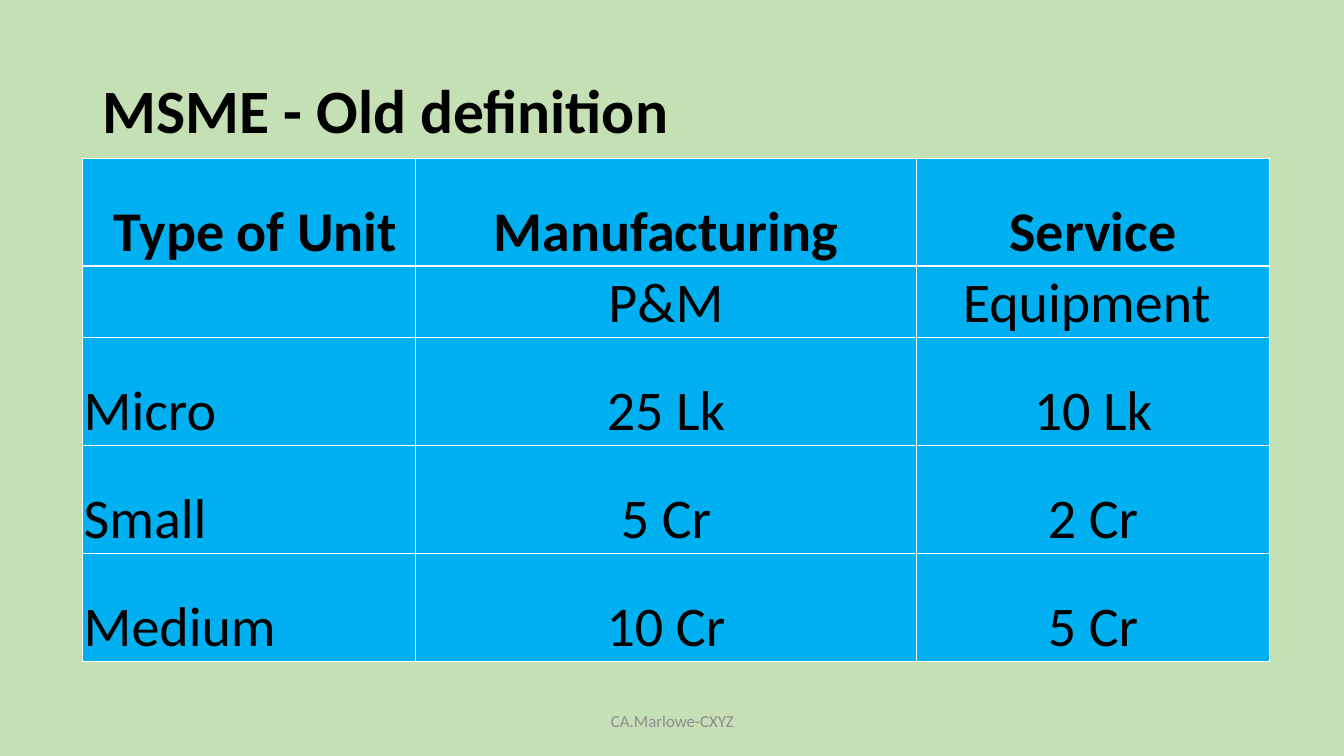
from lxml.etree import SubElement
from pptx import Presentation
from pptx.dml.color import RGBColor
from pptx.enum.text import MSO_ANCHOR, PP_ALIGN
from pptx.oxml.ns import qn
from pptx.util import Inches, Pt

GREEN = RGBColor(0xC5, 0xE0, 0xB4)
BLUE = RGBColor(0x00, 0xB0, 0xF0)
BLACK = RGBColor(0x00, 0x00, 0x00)
GREY = RGBColor(0x8C, 0x8C, 0x8C)
WHITE = RGBColor(0xFF, 0xFF, 0xFF)
FONT = "Calibri"

COL_WIDTHS = [3.3, 4.97, 3.5]
ROW_HEIGHTS = [1.07, 0.71, 1.07, 1.07, 1.07]
UNIT_LIMITS = [
    ["\u00a0Type of Unit".replace("\u00a0", " "), "Manufacturing", "Service"],
    ["", "P&M", "Equipment "],
    ["Micro", "25 Lk", "10 Lk"],
    ["Small", "5 Cr", "2 Cr"],
    ["Medium", "10 Cr", "5 Cr"],
]
UNIT_LIMITS[0][0] = " Type of Unit"


def add_run(p, text, size, color, bold=False):
    """Add one formatted run to a paragraph."""
    r = p.add_run()
    r.text = text
    r.font.name = FONT
    r.font.size = Pt(size)
    r.font.bold = bold
    r.font.color.rgb = color


def add_title(s, x, y, w, h):
    """Place the slide title in its placeholder."""
    sp = s.shapes.title
    sp.left, sp.top, sp.width, sp.height = map(Inches, (x, y, w, h))
    tf = sp.text_frame
    tf.word_wrap = True
    tf.vertical_anchor = MSO_ANCHOR.MIDDLE
    p = tf.paragraphs[0]
    p.alignment = PP_ALIGN.LEFT
    p.line_spacing = 0.9
    add_run(p, "MSME - Old definition", 44, BLACK, True)


def add_borders(cell, color, width):
    """Draw all four borders of a table cell."""
    tc_pr = cell._tc.get_or_add_tcPr()
    for side in ("a:lnL", "a:lnR", "a:lnT", "a:lnB"):
        ln = SubElement(tc_pr, qn(side), w=str(Pt(width)))
        fill = SubElement(ln, qn("a:solidFill"))
        SubElement(fill, qn("a:srgbClr"), val=str(color))


def add_limits_table(s, x, y, w, h):
    """Build the table of investment limits by type of unit."""
    frame = s.shapes.add_table(len(ROW_HEIGHTS), len(COL_WIDTHS),
                               Inches(x), Inches(y), Inches(w), Inches(h))
    table = frame.table
    for col, width in zip(table.columns, COL_WIDTHS):
        col.width = Inches(width)
    for row, height in zip(table.rows, ROW_HEIGHTS):
        row.height = Inches(height)
    for i, texts in enumerate(UNIT_LIMITS):
        for j, text in enumerate(texts):
            cell = table.cell(i, j)
            add_borders(cell, WHITE, 1)
            cell.fill.solid()
            cell.fill.fore_color.rgb = BLUE
            cell.vertical_anchor = MSO_ANCHOR.BOTTOM
            cell.margin_left = cell.margin_right = cell.margin_top = Inches(0.01)
            cell.margin_bottom = 0
            if text:
                p = cell.text_frame.paragraphs[0]
                p.alignment = PP_ALIGN.CENTER if i == 0 or j > 0 else PP_ALIGN.LEFT
                add_run(p, text, 40, BLACK, i == 0)


def add_footer(s, x, y, w, h):
    """Place the centred footer line."""
    sp = s.shapes.add_textbox(Inches(x), Inches(y), Inches(w), Inches(h))
    tf = sp.text_frame
    tf.word_wrap = True
    tf.vertical_anchor = MSO_ANCHOR.MIDDLE
    p = tf.paragraphs[0]
    p.alignment = PP_ALIGN.CENTER
    add_run(p, "CA.Marlowe-CXYZ", 12, GREY)


def main():
    """Build the slide and save it."""
    prs = Presentation()
    prs.slide_width, prs.slide_height = Inches(13.33), Inches(7.5)
    s = prs.slides.add_slide(prs.slide_layouts[5])
    s.background.fill.solid()
    s.background.fill.fore_color.rgb = GREEN
    add_title(s, 0.92, 0.4, 11.5, 1.45)
    add_footer(s, 4.42, 6.95, 4.5, 0.4)
    add_limits_table(s, 0.82, 1.57, sum(COL_WIDTHS), sum(ROW_HEIGHTS))
    prs.save("out.pptx")


if __name__ == "__main__":
    main()
